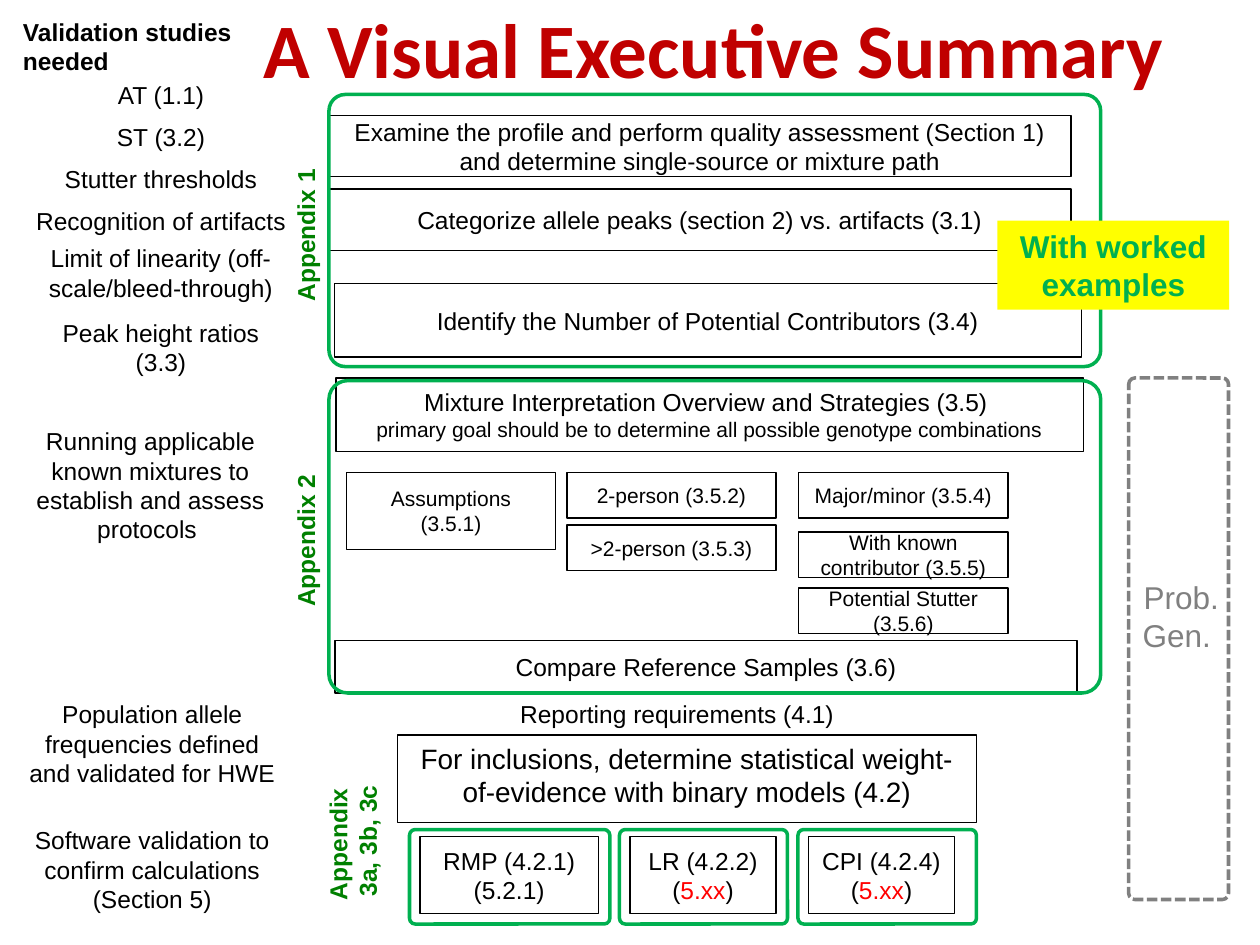
from pptx import Presentation
from pptx.dml.color import RGBColor
from pptx.enum.dml import MSO_LINE
from pptx.enum.shapes import MSO_SHAPE
from pptx.enum.text import MSO_ANCHOR, MSO_AUTO_SIZE, PP_ALIGN
from pptx.util import Pt

COLORS = {
    "black": "000000", "white": "FFFFFF", "red": "FF0000", "title": "C00000",
    "label": "008000", "frame": "00B050", "grey": "808080", "yellow": "FFFF00",
}
PENDING = "5.xx"  # section number still open, shown in red


def add_panel(kind, bounds, fill=None, line=None, width=0.75):
    shape = slide.shapes.add_shape(kind, *map(Pt, bounds))
    shape.shadow.inherit = False
    if fill:
        shape.fill.solid()
        shape.fill.fore_color.rgb = RGBColor.from_string(COLORS[fill])
    else:
        shape.fill.background()
    if line:
        shape.line.color.rgb = RGBColor.from_string(COLORS[line])
        shape.line.width = Pt(width)
    else:
        shape.line.fill.background()
    return shape


def write_text(shape, text, size=14, color="black", bold=False, font="Arial",
               align=PP_ALIGN.CENTER, anchor=MSO_ANCHOR.TOP, wrap=True):
    """Fill a shape with one paragraph per line, with pending sections in red."""
    frame = shape.text_frame
    frame_format = {"word_wrap": wrap, "auto_size": MSO_AUTO_SIZE.NONE,
                    "vertical_anchor": anchor}
    for name, value in frame_format.items():
        setattr(frame, name, value)
    run_format = {"size": Pt(size), "bold": bold, "name": font}
    for index, line in enumerate(text.split("\n")):
        paragraph = frame.add_paragraph() if index else frame.paragraphs[0]
        paragraph.alignment = align
        for part in filter(None, line.partition(PENDING)):
            run = paragraph.add_run()
            run.text = part
            for name, value in run_format.items():
                setattr(run.font, name, value)
            part_color = "red" if part == PENDING else color
            run.font.color.rgb = RGBColor.from_string(COLORS[part_color])


presentation = Presentation()
presentation.slide_width, presentation.slide_height = Pt(720), Pt(540)
slide = presentation.slides.add_slide(presentation.slide_layouts[5])

# Title
title = slide.shapes.title
title_bounds = {"left": -6, "top": -6, "width": 564, "height": 66}
title_bounds["left"] = 126
for name, value in title_bounds.items():
    setattr(title, name, Pt(value))
write_text(title, "A Visual Executive Summary", 44, "title", True, "Calibri",
           anchor=MSO_ANCHOR.MIDDLE)

# Main steps of the workflow
steps = [
    ((188, 66, 424, 35), "Examine the profile and perform quality assessment (Section 1) "
                         "and determine single-source or mixture path"),
    ((191, 162, 427, 42), "Identify the Number of Potential Contributors (3.4)"),
    ((188, 108, 424, 35), "Categorize allele peaks (section 2) vs. artifacts (3.1)"),
    ((191.5, 366, 424, 30), "Compare Reference Samples (3.6)"),
    ((192, 216, 427, 42), "Mixture Interpretation Overview and Strategies (3.5) \n"
                          "primary goal should be to determine all possible genotype combinations"),
    ((240, 478, 102, 44), "RMP (4.2.1)\n(5.2.1)"),
    ((360, 478, 83.5, 44), "LR (4.2.2) (5.xx)"),
    ((462, 478, 83.5, 44), "CPI (4.2.4) (5.xx)"),
]
for bounds, text in steps:
    step = add_panel(MSO_SHAPE.RECTANGLE, bounds, "white", "black")
    write_text(step, text, anchor=MSO_ANCHOR.MIDDLE)
    if "primary goal" in text:
        step.text_frame.paragraphs[1].runs[0].font.size = Pt(12)

statistics = add_panel(MSO_SHAPE.RECTANGLE, (227, 420, 331, 50), line="black")
write_text(statistics, "For inclusions, determine statistical weight-of-evidence "
                       "with binary models (4.2)", 16)

# Mixture strategies
strategies = [
    (198, 270, 44, "Assumptions (3.5.1)"),
    (324, 270, 26, "2-person (3.5.2)"),
    (324, 300, 26, ">2-person (3.5.3)"),
    (456.5, 270, 26, "Major/minor (3.5.4)"),
    (456.5, 304, 26, "With known contributor (3.5.5)"),
    (456.5, 336, 26, "Potential Stutter (3.5.6)"),
]
for left, top, height, text in strategies:
    strategy = add_panel(MSO_SHAPE.RECTANGLE, (left, top, 119.5, height), "white", "black")
    write_text(strategy, text, 12, anchor=MSO_ANCHOR.MIDDLE)

# Validation studies and reporting notes
notes = [
    ((17, 42, 150, 24), "AT (1.1)"),
    ((17, 66, 150, 24), "ST (3.2)"),
    ((17, 90, 150, 24), "Stutter thresholds"),
    ((4, 114, 176, 24), "Recognition of artifacts"),
    ((17, 135.5, 150, 41), "Limit of linearity (off-scale/bleed-through)"),
    ((17, 178, 150, 41), "Peak height ratios (3.3)"),
    ((11, 240, 150, 75), "Running applicable known mixtures to establish and assess protocols "),
    ((6, 396, 162, 58), "Population allele frequencies defined and validated for HWE"),
    ((6, 468, 162, 58), "Software validation to confirm calculations (Section 5)"),
    ((264, 396, 246, 24), "Reporting requirements (4.1)"),
]
for bounds, text in notes:
    write_text(slide.shapes.add_textbox(*map(Pt, bounds)), text)

heading = slide.shapes.add_textbox(Pt(6), Pt(6), Pt(150), Pt(41))
write_text(heading, "Validation studies needed", bold=True, align=PP_ALIGN.LEFT)

# Rounded frames around the appendix groups and probabilistic genotyping
frames = [
    ((188, 54, 441, 155.5), "frame"),
    ((188, 217.5, 441, 178.5), "frame"),
    ((234, 474, 114.5, 54), "frame"),
    ((354, 474, 96, 54), "frame"),
    ((456, 474, 102, 54), "frame"),
    ((645, 216, 57, 298), "grey"),
]
for bounds, color in frames:
    outline = add_panel(MSO_SHAPE.ROUNDED_RECTANGLE, bounds, line=color, width=2)
    outline.adjustments[0] = 0.06
    if color == "grey":
        outline.line.dash_style = MSO_LINE.SQUARE_DOT

genotyping = slide.shapes.add_textbox(Pt(642), Pt(327), Pt(66), Pt(51))
write_text(genotyping, "Prob. Gen. ", 18, "grey")

appendices = [
    ((129, 122.5, 91, 24), "Appendix 1"),
    ((129, 297, 91, 24), "Appendix 2"),
    ((160, 460, 83, 41), "Appendix \n3a, 3b, 3c"),
]
for bounds, text in appendices:
    label = slide.shapes.add_textbox(*map(Pt, bounds))
    label.rotation = 270
    write_text(label, text, color="label", bold=True, wrap=False)

callout = add_panel(MSO_SHAPE.RECTANGLE, (570, 126, 132.5, 51), "yellow")
write_text(callout, "With worked examples", 18, "frame", True)

presentation.save("out.pptx")
